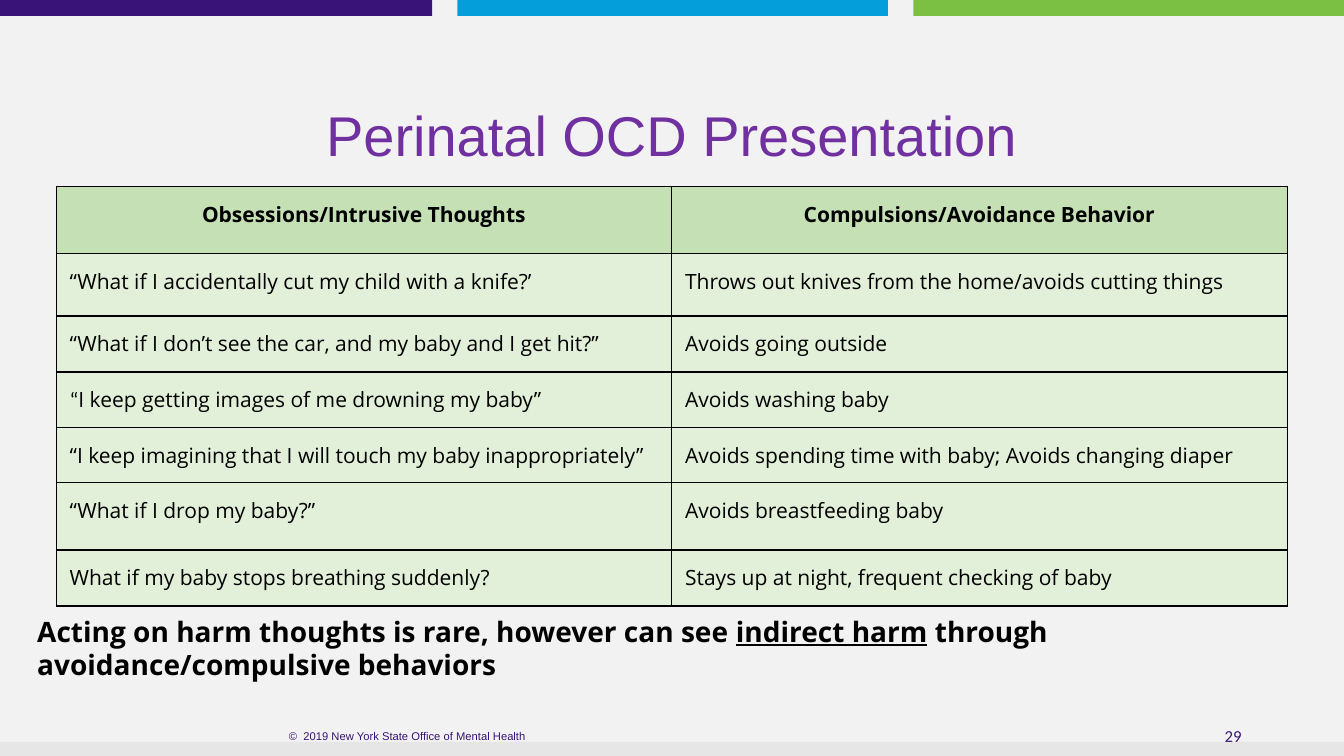
from dataclasses import dataclass
from pptx import Presentation
from pptx.dml.color import RGBColor as RGB
from pptx.enum.shapes import MSO_SHAPE as Shape
from pptx.enum.text import MSO_ANCHOR as Anchor, PP_ALIGN as Align
from pptx.oxml import parse_xml
from pptx.oxml.ns import nsdecls
from pptx.util import Pt


@dataclass(frozen=True)
class Theme:
    """Colours, fonts and sizes of the slide."""
    back: str = "F2F2F2"
    navy: str = "391378"
    blue: str = "049FDA"
    green: str = "7BBF43"
    grey: str = "E7E6E6"
    purple: str = "7030A0"
    black: str = "000000"
    head: str = "C5E0B4"
    body: str = "E2F0D9"
    sans: str = "Arial"
    text: str = "Open Sans"
    plain: str = "Calibri"
    title: int = 40
    note: int = 20
    cell: int = 15
    page: int = 12
    foot: int = 8


T = Theme()
WIDE, HIGH = 960, 540
PAD = 9.6
EDGES = ("lnL", "lnR", "lnT", "lnB")
ROWS = [
    (48, "Obsessions/Intrusive Thoughts", "Compulsions/Avoidance Behavior"),
    (44.5, "“What if I accidentally cut my child with a knife?’",
     "Throws out knives from the home/avoids cutting things"),
    (40, "“What if I don’t see the car, and my baby and I get hit?”",
     "Avoids going outside"),
    (39.6, "“I keep getting images of me drowning my baby”",
     "Avoids washing baby"),
    (39.6, "“I keep imagining that I will touch my baby inappropriately”",
     "Avoids spending time with baby; Avoids changing diaper"),
    (48, "“What if I drop my baby?”", "Avoids breastfeeding baby"),
    (40, "What if my baby stops breathing suddenly?",
     "Stays up at night, frequent checking of baby"),
]


def block(slide, left, top, width, height, tint):
    """Draw a plain filled rectangle."""
    box = slide.shapes.add_shape(
        Shape.RECTANGLE, Pt(left), Pt(top), Pt(width), Pt(height))
    box.shadow.inherit = False
    box.fill.solid()
    box.fill.fore_color.rgb = RGB.from_string(tint)
    box.line.fill.background()


def add_run(para, words, size, face, tint, bold=False, under=False):
    """Add one styled run to a paragraph."""
    run = para.add_run()
    run.text = words
    font = run.font
    font.size, font.name = Pt(size), face
    font.bold, font.underline = bold, under
    font.color.rgb = RGB.from_string(tint)


def pad(item):
    """Set equal margins on a cell or text frame."""
    item.margin_left = item.margin_right = Pt(PAD)
    item.margin_top = item.margin_bottom = Pt(PAD)


def label(slide, left, top, width, height, anchor, align=Align.LEFT):
    """Add a wrapping text box and return its frame and paragraph."""
    box = slide.shapes.add_textbox(Pt(left), Pt(top), Pt(width), Pt(height))
    frame = box.text_frame
    frame.word_wrap = True
    frame.vertical_anchor = anchor
    para = frame.paragraphs[0]
    para.alignment = align
    return frame, para


def border(cell):
    """Give a cell thin black edges."""
    props = cell._tc.get_or_add_tcPr()
    for edge in EDGES:
        props.append(parse_xml(
            f'<a:{edge} {nsdecls("a")} w="{Pt(1)}"><a:solidFill>'
            f'<a:srgbClr val="{T.black}"/></a:solidFill></a:{edge}>'))


def fill_cell(cell, words, head):
    """Style one table cell and write its text."""
    pad(cell)
    border(cell)
    cell.fill.solid()
    cell.fill.fore_color.rgb = RGB.from_string(T.head if head else T.body)
    para = cell.text_frame.paragraphs[0]
    para.alignment = Align.CENTER if head else Align.LEFT
    if words.startswith("“I keep getting"):
        add_run(para, words[0], T.cell, T.plain, T.black)
        words = words[1:]
    add_run(para, words, T.cell, T.text, T.black, bold=head)


def grid(slide, left, top, width):
    """Build the two-column table."""
    high = sum(row[0] for row in ROWS)
    table = slide.shapes.add_table(
        len(ROWS), 2, Pt(left), Pt(top), Pt(width), Pt(high)).table
    for col in table.columns:
        col.width = Pt(width / 2)
    for i, (tall, *pair) in enumerate(ROWS):
        table.rows[i].height = Pt(tall)
        for j, words in enumerate(pair):
            fill_cell(table.cell(i, j), words, i == 0)


def frame_page(slide):
    """Draw the background, colour bars and footer."""
    block(slide, 0, 0, WIDE, HIGH, T.back)
    for left, width, tint in ((0, 308.8, T.navy), (326.8, 307.4, T.blue),
                              (652.4, 307.6, T.green)):
        block(slide, left, 0, width, 11.4, tint)
    _, para = label(slide, 678, 511.2, 216, 28.8, Anchor.MIDDLE, Align.RIGHT)
    add_run(para, "29", T.page, T.plain, T.navy)
    _, para = label(slide, 130, 511.2, 322, 28.8, Anchor.MIDDLE, Align.CENTER)
    add_run(para, "©  2019 New York State Office of Mental Health",
            T.foot, T.sans, T.navy)
    block(slide, 0, 530, WIDE, 10, T.grey)


def main():
    """Build and save the slide."""
    deck = Presentation()
    deck.slide_width, deck.slide_height = Pt(WIDE), Pt(HIGH)
    slide = deck.slides.add_slide(deck.slide_layouts[6])
    frame_page(slide)
    frame, para = label(slide, 223.4, 43.2, 513, 87, Anchor.BOTTOM)
    pad(frame)
    para.line_spacing = 0.9
    add_run(para, "Perinatal OCD Presentation", T.title, T.sans, T.purple)
    grid(slide, 40.2, 133.2, 879.2)
    frame, para = label(slide, 17, 429, 889, 21, Anchor.TOP)
    pad(frame)
    for words, under in (
            ("Acting on harm thoughts is rare, however can see ", False),
            ("indirect harm", True),
            (" through avoidance/compulsive behaviors", False)):
        add_run(para, words, T.note, T.text, T.black, True, under)
    deck.save("out.pptx")


if __name__ == "__main__":
    main()
